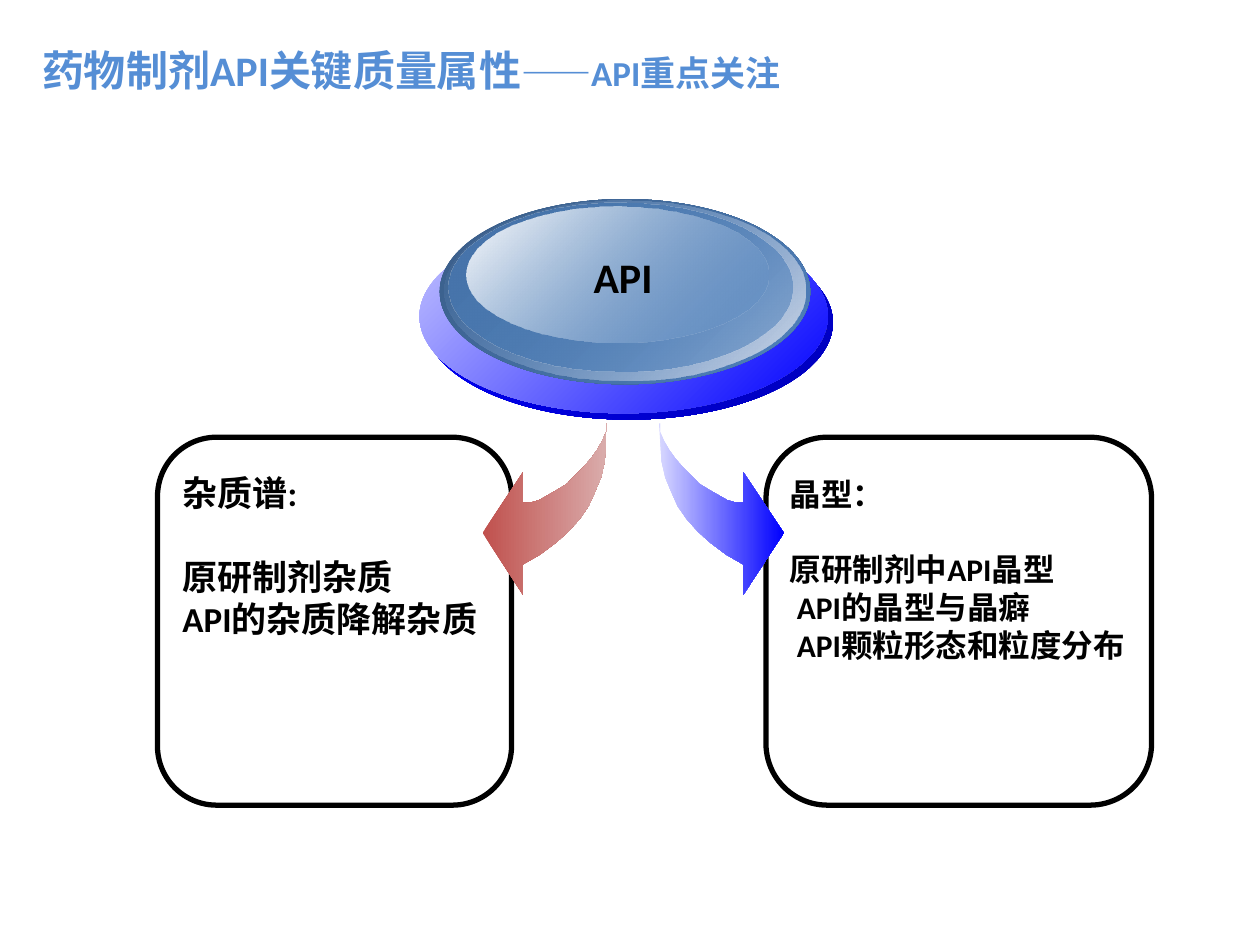
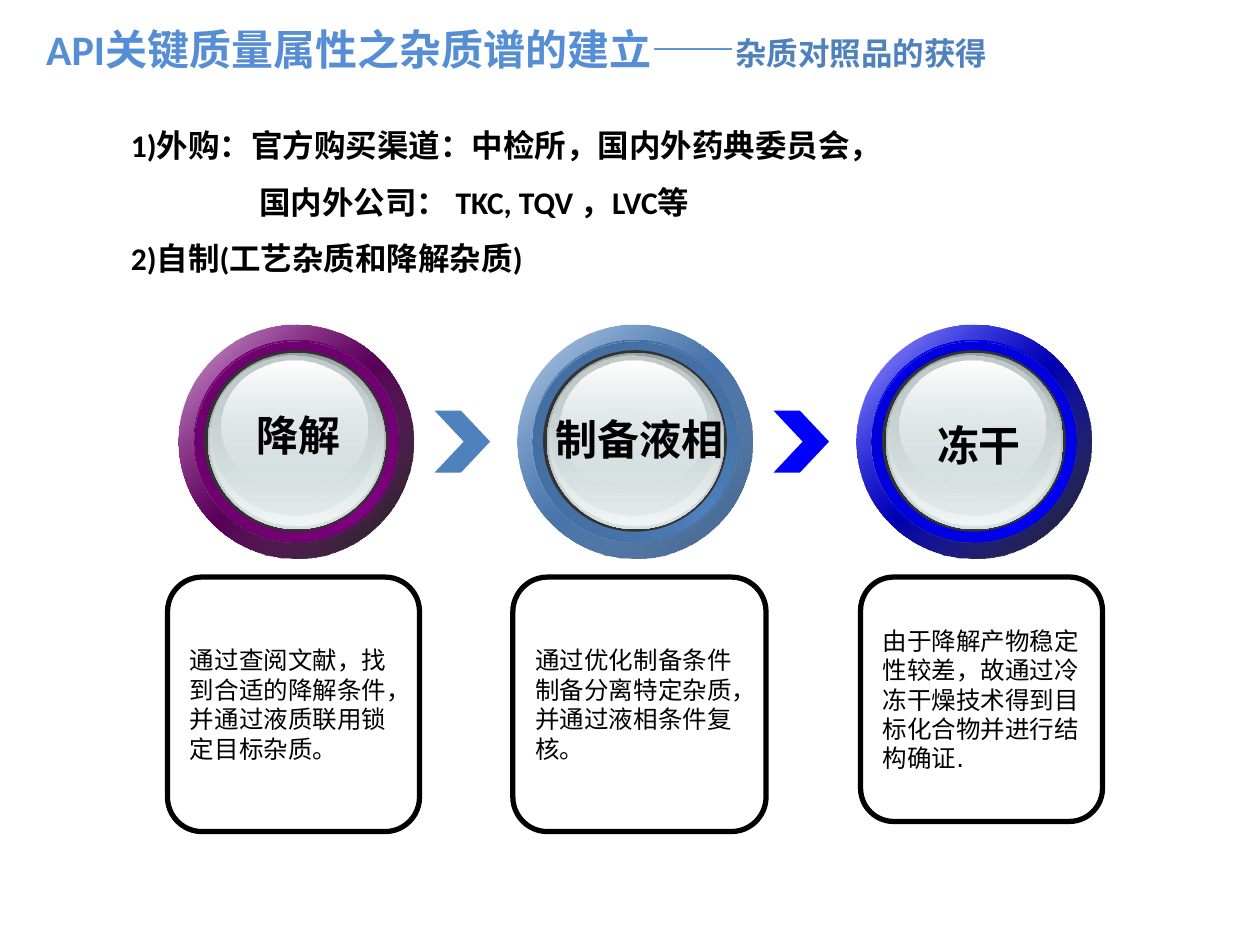
import lxml.etree
import pptx
import pptx.dml.color
import pptx.enum.shapes
import pptx.enum.text
import pptx.oxml.ns
import pptx.util

prs = pptx.Presentation()
prs.slide_width = pptx.util.Inches(10)
prs.slide_height = pptx.util.Inches(7.5)
U = prs.slide_width // 100  # grid of 100 columns by 75 rows

C = {
    "black": "000000", "white": "FFFFFF", "title": "558ED5", "rim": "333333",
    "steel": "4F81BD", "steel_deep": "395C87", "steel_dark": "3C6391",
    "steel_mid": "416A9B", "steel_soft": "4775AB", "steel_pale": "D7DEEB",
    "blue": "0000FF", "blue_deep": "0000BA", "blue_dark": "0000C3",
    "blue_mid": "0000D1", "blue_pale": "C6C6FF", "blue_faint": "D8D8FF",
    "purple": "800080", "purple_dark": "620062", "purple_mid": "690069",
    "red": "C0504D", "red_pale": "DAADAC",
    "glass": "D6E1E2", "glass_dark": "99A1A2", "glass_mid": "C1CBCC", "glass_pale": "F2F5F5",
}
SHAPE = pptx.enum.shapes.MSO_SHAPE
ALIGN = pptx.enum.text.PP_ALIGN
ANCHOR = pptx.enum.text.MSO_ANCHOR
BOLD = {"name": "Calibri", "bold": True}
TITLE = {**BOLD, "size": 24, "color": "title"}
LABEL = {**BOLD, "size": 24}
CENTER = {"alignment": ALIGN.CENTER}


def add(s, kind, at, fill="", angle=0, line=0, adj=None):
    """Add a preset shape, or an outline when kind is a list of points.

    fill is a list of evenly spread colour names, each with an optional @alpha.
    """
    if isinstance(kind, list):
        pts = [(int(x * U), int(y * U)) for x, y in kind]
        fb = s.shapes.build_freeform(*pts[0])
        fb.add_line_segments(pts[1:], close=True)
        sp = fb.convert_to_shape()
    else:
        sp = s.shapes.add_shape(kind, *[int(v * U) for v in at])
    sp.shadow.inherit = False
    if adj:
        sp.adjustments[0] = adj
    if line:
        sp.line.color.rgb = pptx.dml.color.RGBColor.from_string(C["black"])
        sp.line.width = pptx.util.Pt(line)
    else:
        sp.line.fill.background()
    stops = fill.split()
    if len(stops) == 1:
        sp.fill.solid()
        sp.fill.fore_color.rgb = pptx.dml.color.RGBColor.from_string(C[fill])
        return sp
    sp.fill.background()
    if stops:
        qn, sub = pptx.oxml.ns.qn, lxml.etree.SubElement
        none = sp._element.spPr.find(qn("a:noFill"))
        grad = lxml.etree.Element(qn("a:gradFill"), rotWithShape="1")
        gs_list = sub(grad, qn("a:gsLst"))
        for i, stop in enumerate(stops):
            name, _, alpha = stop.partition("@")
            gs = sub(gs_list, qn("a:gs"), pos=str(100000 * i // (len(stops) - 1)))
            clr = sub(gs, qn("a:srgbClr"), val=C[name])
            if alpha:
                sub(clr, qn("a:alpha"), val=str(int(alpha) * 1000))
        sub(grad, qn("a:lin"), ang=str(angle * 60000), scaled="0")
        none.getparent().replace(none, grad)
    return sp


def write(sp, paras, fmt, anchor=ANCHOR.TOP, wrap=True):
    """Write paragraphs, each a (runs, paragraph format) pair; a run is (text, changes)."""
    tf = sp.text_frame
    tf.word_wrap, tf.vertical_anchor = wrap, anchor
    for i, (runs, pfmt) in enumerate(paras):
        p = tf.paragraphs[0] if i == 0 else tf.add_paragraph()
        for key, value in {"alignment": ALIGN.LEFT, **pfmt}.items():
            if key in ("marL", "indent"):
                p._p.get_or_add_pPr().set(key, str(int(value * U)))
            else:
                setattr(p, key, value)
        for text, changes in runs:
            r = p.add_run()
            r.text = text
            for key, value in {"color": "black", **fmt, **changes}.items():
                if key == "color":
                    r.font.color.rgb = pptx.dml.color.RGBColor.from_string(C[value])
                else:
                    setattr(r.font, key, pptx.util.Pt(value) if key == "size" else value)


# Slides and their titles
slides = []
for at, runs in [
    ((0, 2.3, 65.3, 6.4), [("药物制剂API关键质量属性", {}), ("——API重点关注", {"size": 20})]),
    ((0, 0, 82, 7.8), [("API关键质量属性之杂质谱的建立——", {}),
                       ("杂质对照品的获得", {"size": 18, "color": "steel"})]),
]:
    s = prs.slides.add_slide(prs.slide_layouts[6])
    tb = s.shapes.add_textbox(*[int(v * U) for v in at])
    write(tb, [(runs, CENTER)], TITLE, ANCHOR.MIDDLE)
    slides.append(s)

# Slide 1: frames
s = slides[0]
for x, w in [(60.8, 30.6), (12.5, 28.1)]:
    add(s, SHAPE.ROUNDED_RECTANGLE, (x, 34.7, w, 29.2), line=3, adj=0.167)

# Slide 1: mirrored curved arrows
arrow = [(48.2, 33.6), (48.1, 35.1), (48, 36.6), (47.7, 37.9), (47.2, 39.1), (46.7, 40.2),
         (46, 41.2), (45.1, 42.2), (44.1, 43.1), (42.9, 44), (41.5, 44.8), (41.5, 47.2),
         (38.3, 42.3), (41.5, 37.5), (41.5, 39.9), (42.1, 39.9), (42.8, 39.7), (43.5, 39.3),
         (44.2, 38.9), (45, 38.4), (45.6, 37.8), (46.3, 37.1), (46.9, 36.4), (47.4, 35.7),
         (47.8, 35), (48.1, 34.3), (48.1, 33.6)]
add(s, arrow, None, "red red_pale")
add(s, [(100.5 - x, y) for x, y in arrow], None, "blue_faint blue")

# Slide 1: layered disc
for at, fill in [
    ((33.7, 17.9, 32.4, 15.4), "blue blue_deep"),
    ((33.3, 17.4, 32.4, 15.4), "blue_pale blue"),
    ((34.9, 15.8, 29.4, 14.7), "steel_deep steel"),
    ((35.3, 15.9, 28.6, 14.3), "steel@0 steel_pale"),
    ((35.6, 16.1, 27.3, 13.4), "steel_soft steel@48"),
    ((37, 16.4, 24, 10.8), "white steel@38"),
]:
    add(s, SHAPE.OVAL, at, fill, 45)
tb = s.shapes.add_textbox(*[int(v * U) for v in (46.1, 19.5, 6.7, 5.1)])
write(tb, [([("API", {})], CENTER)], LABEL, wrap=False)

# Slide 1: texts in the frames, the second line set apart by one line height
for at, size, gap, lines in [
    ((13.5, 36.9, 26.3, 14.5), 20, 24, [("杂质谱:", 0), ("原研制剂杂质", 0), ("API的杂质降解杂质", 0)]),
    ((61.7, 37.2, 28.9, 16.2), 18, 21.5, [("晶型：", 0), ("原研制剂中API晶型", 0),
                                          ("API的晶型与晶癖", 0.55), ("API颗粒形态和粒度分布", 0.55)]),
]:
    tb = s.shapes.add_textbox(*[int(v * U) for v in at])
    paras = [([(text, {})], {"indent": indent, "space_before": pptx.util.Pt(gap if i == 1 else 0)})
             for i, (text, indent) in enumerate(lines)]
    write(tb, paras, {**BOLD, "size": size})

# Slide 2: sources of reference substances
s = slides[1]
tb = s.shapes.add_textbox(*[int(v * U) for v in (9.4, 8, 74.2, 14.6)])
write(tb, [([(text, {})], {"line_spacing": 1.5, "marL": margin}) for text, margin in [
    ("1)外购：官方购买渠道：中检所，国内外药典委员会，", 0),
    ("国内外公司： TKC, TQV ，LVC等", 10.2),
    ("2)自制(工艺杂质和降解杂质)", 0),
]], {**BOLD, "size": 18})

# Slide 2: step panels
for at, text in [
    ((13.3, 45.8, 20, 20.2), "通过查阅文献，找到合适的降解条件，并通过液质联用锁定目标杂质。"),
    ((40.7, 45.8, 20.1, 20.2), "通过优化制备条件制备分离特定杂质，并通过液相条件复核。"),
    ((68.3, 45.8, 19.2, 19.4), "由于降解产物稳定性较差，故通过冷冻干燥技术得到目标化合物并进行结构确证."),
]:
    sp = add(s, SHAPE.ROUNDED_RECTANGLE, at, line=3, adj=0.137)
    write(sp, [([(text, {})], {})], {"name": "DejaVu Sans", "size": 14}, ANCHOR.MIDDLE)

# Slide 2: ringed buttons, one for each step
LEFT, PITCH = 14.2, 26.9
for i, (hue, shade, label, at) in enumerate([
    ("purple", "black@90", "降解", (19.3, 32, 8.8, 5)),
    ("steel", "steel_deep", "制备液相", (43, 32.3, 15.5, 5)),
    ("blue", "black@90", "冻干", (73.3, 32.8, 8.8, 5)),
]):
    x = LEFT + i * PITCH
    for dx, y, w, h, fill, angle in [
        (0, 25.8, 18.6, 18.5, f"white {hue} white", 45),
        (0, 25.8, 18.6, 18.5, f"{hue}@32 {shade}", 45),
        (1.2, 27, 16.2, 16, f"{hue}_dark {hue} {hue}_dark", 315),
        (1.2, 27.1, 16.2, 16, f"{hue}_mid {hue}@0", 45),
        (2, 27.8, 14.6, 14.4, "rim", 0),
        (2.3, 28, 14.1, 14, "glass_dark glass", 90),
        (2.4, 28.1, 13.8, 13.6, "glass@0 glass_pale", 90),
        (2.6, 28.2, 13.1, 12.7, "glass_mid glass@48", 90),
        (3.4, 28.6, 11.6, 10.3, "white glass@38", 90),
    ]:
        add(s, SHAPE.OVAL, (x + dx, y, w, h), fill, angle)
    tb = s.shapes.add_textbox(*[int(v * U) for v in at])
    write(tb, [([(label, {})], CENTER)], LABEL, wrap=False)

# Slide 2: chevrons between the buttons
for i, hue in enumerate(["steel", "blue"]):
    add(s, SHAPE.CHEVRON, (LEFT + 20.3 + i * PITCH, 32.6, 4.4, 4.9), hue, adj=0.525)

prs.save("out.pptx")
